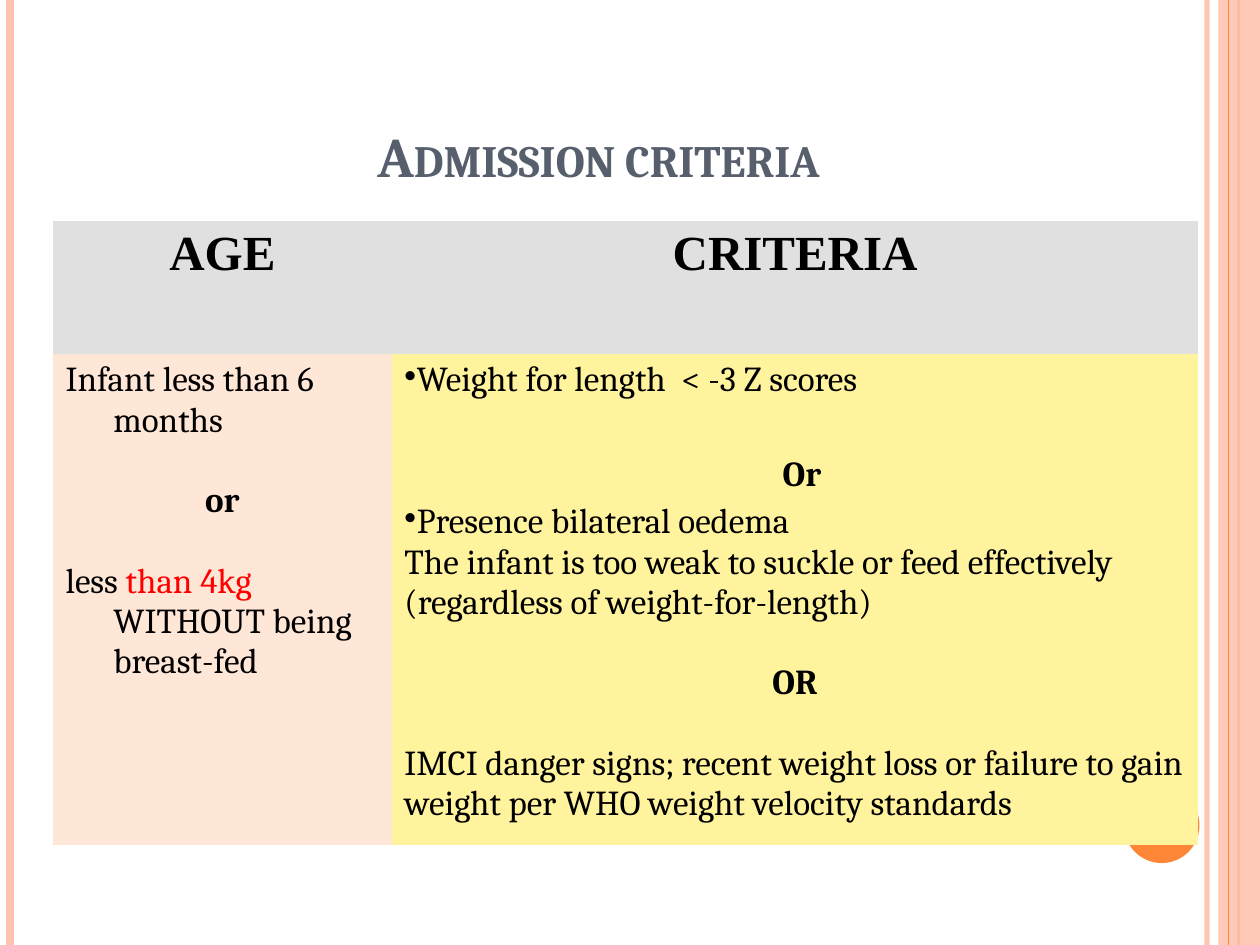
"""Build a slide with a table of admission criteria for infants."""
from lxml import etree
from pptx import Presentation
from pptx.dml.color import RGBColor
from pptx.enum.shapes import MSO_CONNECTOR, MSO_SHAPE
from pptx.enum.text import MSO_ANCHOR, PP_ALIGN
from pptx.oxml.ns import qn
from pptx.util import Inches, Pt

LINE = MSO_CONNECTOR.STRAIGHT
RECT, OVAL = MSO_SHAPE.RECTANGLE, MSO_SHAPE.OVAL
LEFT, MID = PP_ALIGN.LEFT, PP_ALIGN.CENTER
LOW = MSO_ANCHOR.BOTTOM
WIDE, HIGH = 10, 7.5
HANG = 0.38
PLAIN = "{2D5ABB26-0587-4C30-8999-92F81FD0307C}"
COLORS = {
    "peach": "FEC3AE", "orange": "FE8637", "slate": "575F6D",
    "black": "000000", "red": "FF0000", "gray": "E0E0E0",
    "pink": "FFE7D7", "yellow": "FFF39D",
}

TITLE = "Admission criteria"
RULES = [(9.58, "peach", 3, 93), (0.08, "peach", 4.5, 100), (9.83, "orange", 1.5, 100)]
THIN = (9.75, "orange", 0.75, 100)
COLS, ROWS = (2.69, 6.4), (1.06, 3.89)
HEADS = ("AGE", "CRITERIA")
AGE = [
    ("Infant less than 6 months", {}),
    ("or", {"bold": True, "align": MID, "gap": 23}),
    ([("less ", "black"), ("than 4kg ", "red"), ("WITHOUT being breast-fed", "black")],
     {"gap": 23}),
]
SIGNS = [
    ("Weight for length  < -3 Z scores", {"bullet": True}),
    ("Or", {"bold": True, "align": MID, "gap": 31, "left": 0.11}),
    ("Presence bilateral oedema", {"bullet": True, "gap": 4}),
    ("The infant is too weak to suckle or feed effectively (regardless of weight-for-length)", {}),
    ("OR", {"bold": True, "align": MID, "gap": 23}),
    ("IMCI danger signs; recent weight loss or failure to gain weight per WHO "
     "weight velocity standards", {"gap": 23}),
]


def rgb(name):
    return RGBColor.from_string(COLORS[name])


def fade(fill, name, share):
    fill.solid()
    fill.fore_color.rgb = rgb(name)
    if share < 100:
        tint = next(fill._xPr.iter(qn("a:srgbClr")))
        etree.SubElement(tint, qn("a:alpha")).set("val", str(share * 1000))


def write(frame, text, size=20, font="Cambria", color="black", bold=False, align=LEFT,
          gap=0, left=0, hang=0, bullet=False, caps=False):
    par = frame.paragraphs[0]
    if par.runs:
        par = frame.add_paragraph()
    par.alignment, par.space_before = align, Pt(gap)
    props = par._p.get_or_add_pPr()
    props.set("marL", str(Inches(left + hang)))
    props.set("indent", str(Inches(-hang)))
    if bullet:
        etree.SubElement(props, qn("a:buChar")).set("char", "•")
    for part, tone in [(text, color)] if isinstance(text, str) else text:
        run = par.add_run()
        run.text = part
        run.font.size, run.font.name, run.font.bold = Pt(size), font, bold
        run.font.color.rgb = rgb(tone)
        if caps:
            run._r.get_or_add_rPr().set("cap", "small")


def rule(slide, x, color, width, share):
    line = slide.shapes.add_connector(LINE, Inches(x), 0, Inches(x), Inches(HIGH))
    line.line.width = Pt(width)
    fade(line.line.fill, color, share)
    etree.SubElement(line._element.spPr, qn("a:effectLst"))


def shape(slide, kind, box, color, share=100):
    item = slide.shapes.add_shape(kind, *map(Inches, box))
    item.shadow.inherit = False
    item.line.fill.background()
    fade(item.fill, color, share)


def grid(slide):
    table = slide.shapes.add_table(
        2, 2, Inches(0.42), Inches(1.75), Inches(sum(COLS)), Inches(sum(ROWS))).table
    table.first_row = table.horz_banding = False
    table._tbl.tblPr.find(qn("a:tableStyleId")).text = PLAIN
    for col, width in zip(table.columns, COLS):
        col.width = Inches(width)
    for row, height in zip(table.rows, ROWS):
        row.height = Inches(height)
    bodies = [(AGE, "pink", HANG), (SIGNS, "yellow", 0)]
    for pos, (head, (lines, color, hang)) in enumerate(zip(HEADS, bodies)):
        top, body = table.cell(0, pos), table.cell(1, pos)
        fade(top.fill, "gray", 100)
        fade(body.fill, color, 100)
        write(top.text_frame, head, size=28, font="Times New Roman", bold=True,
              align=MID, hang=HANG)
        for text, style in lines:
            write(body.text_frame, text, hang=hang, **style)


def main():
    deck = Presentation()
    deck.slide_width, deck.slide_height = Inches(WIDE), Inches(HIGH)
    slide = deck.slides.add_slide(deck.slide_layouts[6])
    for item in RULES:
        rule(slide, *item)
    shape(slide, RECT, (9.67, 0, 0.33, HIGH), "peach", 87)
    rule(slide, *THIN)
    shape(slide, OVAL, (8.92, 6.25, 0.6, 0.6), "orange")
    frame = slide.shapes.add_textbox(0, Inches(0.3), Inches(9.5), Inches(1.25)).text_frame
    frame.word_wrap, frame.vertical_anchor = True, LOW
    write(frame, TITLE, size=32, color="slate", bold=True, align=MID, caps=True)
    grid(slide)
    deck.save("out.pptx")


if __name__ == "__main__":
    main()
